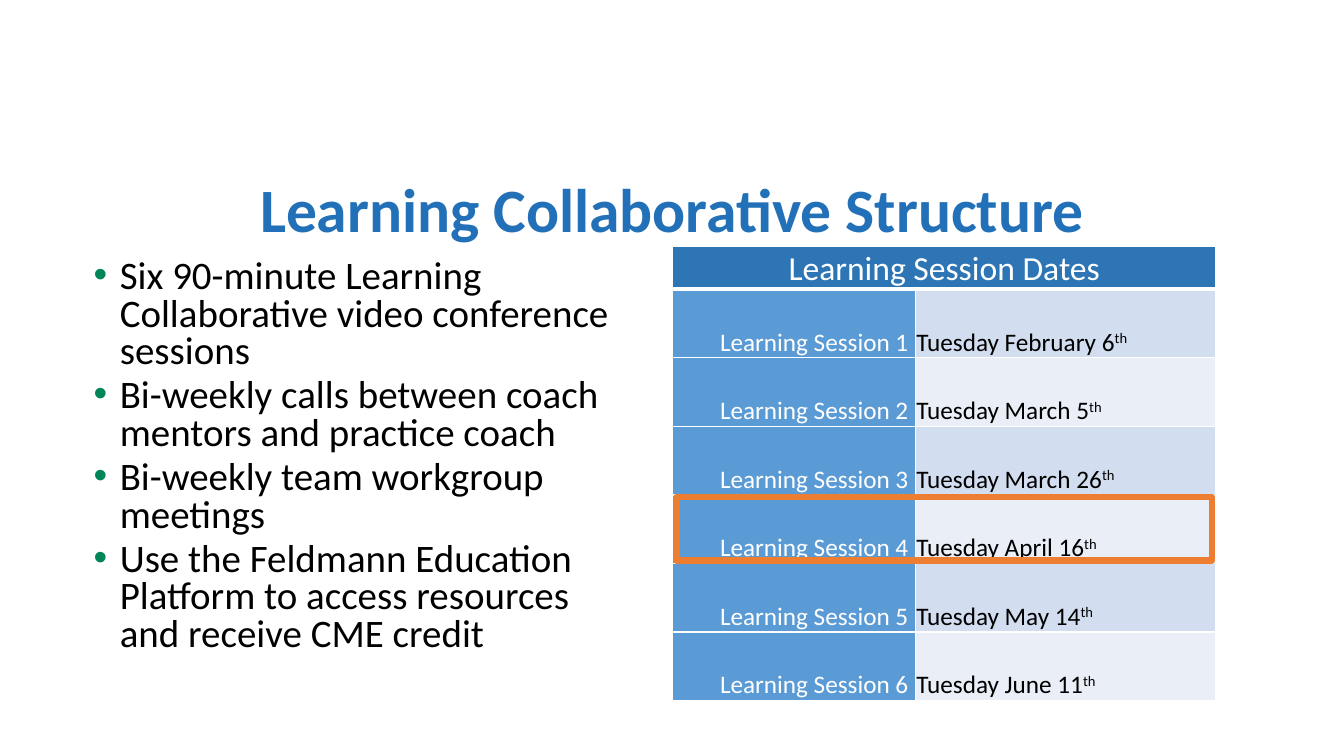
from lxml import etree
from pptx import Presentation
from pptx.dml.color import RGBColor
from pptx.enum import shapes, text
from pptx.oxml import ns
from pptx.util import Inches, Pt

COLORS = {
    "title": "2270B7", "bullet": "008558", "black": "000000", "white": "FFFFFF",
    "header": "2E75B6", "session": "5B9BD5", "odd": "D2DEEF", "even": "EAEFF7",
    "highlight": "ED7D31",
}
POINTS = [
    "Six 90-minute Learning Collaborative video conference sessions",
    "Bi-weekly calls between coach mentors and practice coach",
    "Bi-weekly team workgroup meetings",
    "Use the Feldmann Education Platform to access resources and receive CME credit",
]
DATES = ["February 6", "March 5", "March 26", "April 16", "May 14", "June 11"]


def style_font(para, size, color, bold=False):
    para.font.name = "Calibri"
    para.font.size = Pt(size)
    para.font.bold = bold
    para.font.color.rgb = RGBColor.from_string(COLORS[color])


def style_cell(cell, fill, side, top, bottom_line=1):
    cell.vertical_anchor = text.MSO_ANCHOR.BOTTOM
    cell.margin_left = cell.margin_right = Inches(side)
    cell.margin_top = Inches(top)
    cell.margin_bottom = 0
    properties = cell._tc.get_or_add_tcPr()
    for edge, width in (("L", 1), ("R", 1), ("T", 1), ("B", bottom_line)):
        line = etree.SubElement(properties, ns.qn(f"a:ln{edge}"), w=str(Pt(width)))
        solid = etree.SubElement(line, ns.qn("a:solidFill"))
        etree.SubElement(solid, ns.qn("a:srgbClr"), val=COLORS["white"])
    cell.fill.solid()
    cell.fill.fore_color.rgb = RGBColor.from_string(COLORS[fill])


deck = Presentation()
deck.slide_width = Inches(13.33)
deck.slide_height = Inches(7.5)
page = deck.slides.add_slide(deck.slide_layouts[5])

title = page.shapes.title
title.left, title.top = Inches(0.92), Inches(1.69)
title.width, title.height = Inches(11.5), Inches(0.83)
title.text_frame.text = "Learning Collaborative Structure"
title.text_frame.vertical_anchor = text.MSO_ANCHOR.MIDDLE
heading = title.text_frame.paragraphs[0]
heading.alignment = text.PP_ALIGN.CENTER
heading.line_spacing = 0.9
style_font(heading, 44, "title", bold=True)

box = page.shapes.add_textbox(Inches(0.83), Inches(2.53), Inches(5.58), Inches(4.4))
box.text_frame.word_wrap = True
box.text_frame.text = "\n".join(POINTS)
for para in box.text_frame.paragraphs:
    para.line_spacing = 0.8
    para.space_after = Pt(5)
    layout = para._p.get_or_add_pPr()
    layout.set("marL", str(Inches(0.26)))
    layout.set("indent", str(Inches(-0.26)))
    bullet_color = etree.SubElement(layout, ns.qn("a:buClr"))
    etree.SubElement(bullet_color, ns.qn("a:srgbClr"), val=COLORS["bullet"])
    etree.SubElement(layout, ns.qn("a:buFont"), typeface="Arial")
    etree.SubElement(layout, ns.qn("a:buChar"), char="•")
    style_font(para, 27.8, "black")

frame = page.shapes.add_table(
    len(DATES) + 1, 2, Inches(6.67), Inches(2.44), Inches(5.39), Inches(4.51))
table = frame.table
table.horz_banding = False
table.columns[0].width = Inches(2.41)
table.columns[1].width = Inches(2.98)
table.rows[0].height = Inches(0.43)

header = table.cell(0, 0)
header.merge(table.cell(0, 1))
header.text = "Learning Session Dates"
style_cell(header, "header", 0.07, 0, bottom_line=3)
header_para = header.text_frame.paragraphs[0]
header_para.alignment = text.PP_ALIGN.CENTER
style_font(header_para, 24, "white")

for number, date in enumerate(DATES, 1):
    table.rows[number].height = Inches(0.68)
    session, day = table.cell(number, 0), table.cell(number, 1)
    session.text = f"Learning Session {number}"
    style_cell(session, "session", 0.07, 0)
    session_para = session.text_frame.paragraphs[0]
    session_para.alignment = text.PP_ALIGN.RIGHT
    style_font(session_para, 18, "white")

    day.text = f"Tuesday {date}"
    style_cell(day, "odd" if number % 2 else "even", 0.01, 0.01)
    day_para = day.text_frame.paragraphs[0]
    suffix = day_para.add_run()
    suffix.text = "th"
    suffix._r.get_or_add_rPr().set("baseline", "30000")
    style_font(day_para, 18, "black")

highlight = page.shapes.add_shape(
    shapes.MSO_SHAPE.RECTANGLE, Inches(6.71), Inches(4.93), Inches(5.31), Inches(0.63))
highlight.shadow.inherit = False
highlight.fill.background()
highlight.line.color.rgb = RGBColor.from_string(COLORS["highlight"])
highlight.line.width = Pt(4.5)

deck.save("out.pptx")
